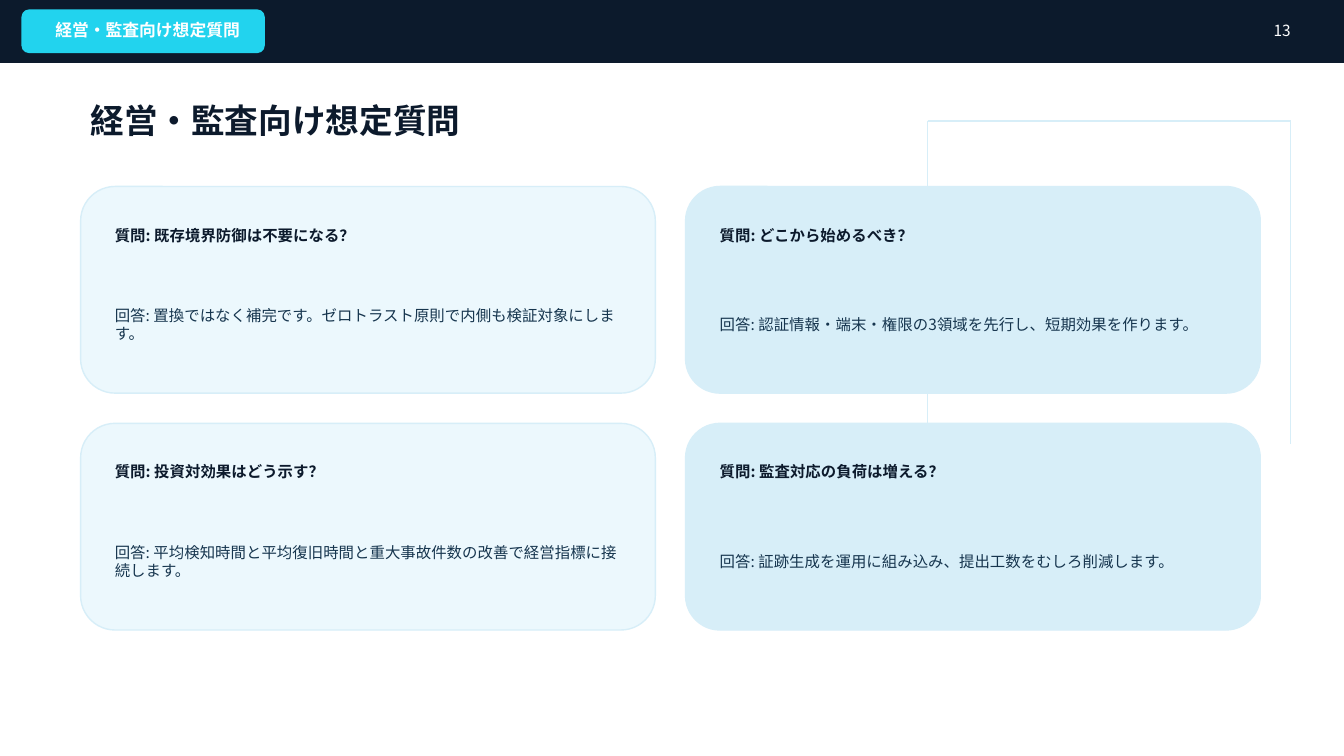
"""Build the slide of expected questions from management and auditors."""
from pptx import Presentation
from pptx.dml.color import RGBColor
from pptx.enum.shapes import MSO_CONNECTOR, MSO_SHAPE
from pptx.enum.text import MSO_ANCHOR, PP_ALIGN
from pptx.oxml.ns import qn
from pptx.util import Inches, Pt
from lxml.etree import SubElement

TITLE = "経営・監査向け想定質問"
PAGE = "13"
QUESTIONS = [
    ("既存境界防御は不要になる？", "置換ではなく補完です。ゼロトラスト原則で内側も検証対象にします。"),
    ("どこから始めるべき？", "認証情報・端末・権限の3領域を先行し、短期効果を作ります。"),
    ("投資対効果はどう示す？", "平均検知時間と平均復旧時間と重大事故件数の改善で経営指標に接続します。"),
    ("監査対応の負荷は増える？", "証跡生成を運用に組み込み、提出工数をむしろ削減します。"),
]
FRAME_LINES = [(9.2, 1.2, 12.8, 1.2), (9.2, 1.2, 9.2, 4.4), (12.8, 1.2, 12.8, 4.4)]

NAVY = RGBColor(0x0C, 0x1A, 0x2C)
CYAN = RGBColor(0x22, 0xD3, 0xEE)
WHITE = RGBColor(0xFF, 0xFF, 0xFF)
PALE = RGBColor(0xEC, 0xF8, 0xFD)
SKY = RGBColor(0xD7, 0xEE, 0xF8)
SLATE = RGBColor(0x16, 0x35, 0x4E)
BODY_FONT = "Noto Sans CJK JP"
TITLE_FONT = "DejaVu Sans Mono"

CARD_LEFT, CARD_TOP, CARD_W, CARD_H, GAP = 0.8, 1.85, 5.7, 2.05, 0.3
PAD, TEXT_W = 0.24, 5.2

prs = Presentation()
prs.slide_width, prs.slide_height = Inches(13.33), Inches(7.5)
s = prs.slides.add_slide(prs.slide_layouts[6])
s.background.fill.solid()
s.background.fill.fore_color.rgb = WHITE


def add_box(kind, x, y, w, h, fill, line):
    sp = s.shapes.add_shape(kind, Inches(x), Inches(y), Inches(w), Inches(h))
    sp.shadow.inherit = False
    sp.fill.solid()
    sp.fill.fore_color.rgb = fill
    sp.line.color.rgb = line
    sp.line.width = Pt(1)


def add_text(text, x, y, w, h, size=11, color=NAVY, bold=False,
             font=BODY_FONT, align=PP_ALIGN.LEFT):
    tf = s.shapes.add_textbox(Inches(x), Inches(y), Inches(w), Inches(h)).text_frame
    tf.word_wrap = True
    tf.vertical_anchor = MSO_ANCHOR.MIDDLE
    p = tf.paragraphs[0]
    p.alignment = align
    r = p.add_run()
    r.text = text
    r.font.name = font
    r.font.size = Pt(size)
    r.font.bold = bold
    r.font.color.rgb = color
    SubElement(r.font._element, qn("a:ea")).set("typeface", font)


for ends in FRAME_LINES:
    line = s.shapes.add_connector(MSO_CONNECTOR.STRAIGHT, *map(Inches, ends))
    line.line.color.rgb = SKY
    line.line.width = Pt(1)
    SubElement(line._element.spPr, qn("a:effectLst"))

add_box(MSO_SHAPE.RECTANGLE, 0, 0, 13.33, 0.62, NAVY, NAVY)
add_box(MSO_SHAPE.ROUNDED_RECTANGLE, 0.22, 0.1, 2.4, 0.42, CYAN, CYAN)
add_text(TITLE, 0.45, 0.18, 8.8, 0.24, size=12, color=WHITE, bold=True)
add_text(PAGE, 12.15, 0.18, 0.75, 0.24, color=WHITE, align=PP_ALIGN.RIGHT)
add_text(TITLE, 0.8, 0.95, 11.4, 0.48, size=24, bold=True, font=TITLE_FONT)

for i, (question, answer) in enumerate(QUESTIONS):
    row, col = divmod(i, 2)
    x = CARD_LEFT + col * (CARD_W + GAP)
    y = CARD_TOP + row * (CARD_H + GAP)
    add_box(MSO_SHAPE.ROUNDED_RECTANGLE, x, y, CARD_W, CARD_H, (PALE, SKY)[col], SKY)
    add_text(f"質問: {question}", x + PAD, y + PAD, TEXT_W, 0.48, bold=True)
    add_text(f"回答: {answer}", x + PAD, y + 0.82, TEXT_W, 1.1, color=SLATE)

prs.save("out.pptx")
